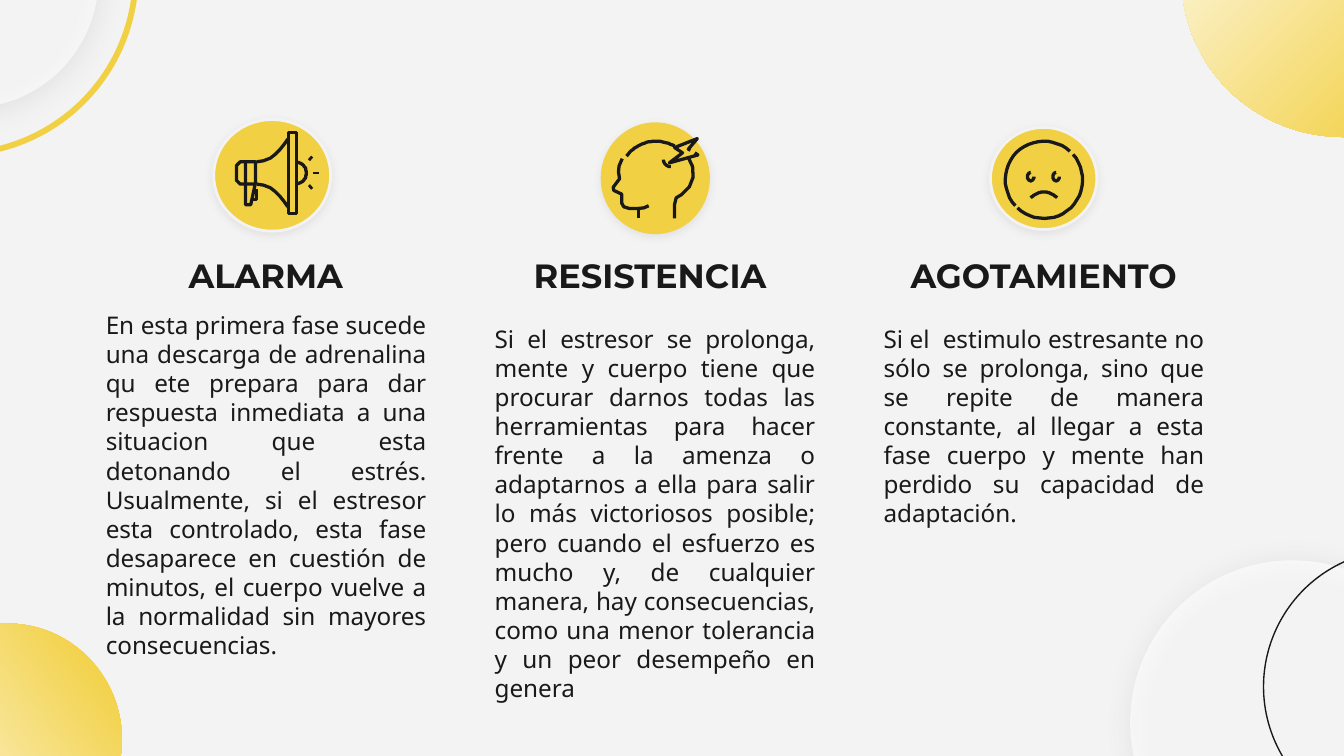
from math import cos, radians, sin

from lxml import etree
from pptx import Presentation
from pptx.dml.color import RGBColor
from pptx.enum import shapes, text
from pptx.oxml import ns
from pptx.util import Cm, Pt

YELLOW = RGBColor(0xF2, 0xD0, 0x44)
WHITE = RGBColor(0xFF, 0xFF, 0xFF)
PAPER = RGBColor(0xF3, 0xF3, 0xF3)
INK = RGBColor(0x19, 0x19, 0x19)
SHADE = RGBColor(0x59, 0x59, 0x59)


def arc(x, y, rx, ry, start, end):
    """Points along an elliptical arc; angles in degrees, clockwise from the right."""
    angles = [radians(start + (end - start) * i / 24) for i in range(25)]
    return [(round(x + rx * cos(a)), round(y + ry * sin(a))) for a in angles]


def draw_strokes(group, width, *lines):
    """Draw open lines, given in hundredths of a centimetre, as one shape."""
    builder = group.shapes.build_freeform(*lines[0][0], scale=Cm(0.01))
    builder.add_line_segments(lines[0][1:], close=False)
    for line in lines[1:]:
        builder.move_to(*line[0])
        builder.add_line_segments(line[1:], close=False)
    shape = builder.convert_to_shape()
    shape.shadow.inherit = False
    shape.fill.background()
    shape.line.color.rgb = INK
    shape.line.width = Pt(width)


deck = Presentation()
deck.slide_width, deck.slide_height = Cm(25.4), Cm(14.29)
page = deck.slides.add_slide(deck.slide_layouts[6])
page.background.fill.solid()
page.background.fill.fore_color.rgb = PAPER

# Corner decorations and icon badges, back to front
relief = {"blur": 14.6, "dist": 2.2, "dir": 74, "alpha": 19}
soft = {"blur": 4.5, "dist": 1.5, "dir": 90, "alpha": 11}
badge = {"fill": YELLOW, "width": 1.5, "shadow": soft}
glass = {"fill": WHITE, "alpha": 62, "rotation": 213.6, "shadow": relief}
rounds = [
    ((22.33, -3.43, 6.1, 6.02), {"gradient": True}),
    ((-3.02, -2.84, 4.88, 4.88), glass),
    ((-4.29, -3.94, 6.91, 6.91), {"fill": YELLOW, "hole": 0.016}),
    ((-2.06, 11.81, 4.39, 4.34), {"gradient": True, "rotation": 278.6}),
    ((21.36, 10.59, 6.12, 6.12), glass),
    ((4.04, 2.26, 2.21, 2.11), {**badge, "line": PAPER}),
    ((11.38, 2.34, 2.01, 2.06), {**badge, "line": YELLOW}),
    ((18.72, 2.41, 2.01, 1.93), {**badge, "line": PAPER}),
    ((23.88, 10.39, 5.18, 5.18), {"line": INK, "width": 0.75}),
]
for place, look in rounds:
    kind = shapes.MSO_SHAPE.DONUT if "hole" in look else shapes.MSO_SHAPE.OVAL
    shape = page.shapes.add_shape(kind, *map(Cm, place))
    shape.rotation = look.get("rotation", 0)
    shape.shadow.inherit = False
    if "hole" in look:
        shape.adjustments[0] = look["hole"]
    if "gradient" in look:
        shape.fill.gradient()
        shape.fill.gradient_angle = 135
        for stop, position, color in zip(shape.fill.gradient_stops, (0.15, 1), (YELLOW, WHITE)):
            stop.position = position
            stop.color.rgb = color
    elif "fill" in look:
        shape.fill.solid()
        shape.fill.fore_color.rgb = look["fill"]
    else:
        shape.fill.background()
    if "alpha" in look:
        color = shape.fill._xPr.find(".//" + ns.qn("a:srgbClr"))
        etree.SubElement(color, ns.qn("a:alpha"), val=str(look["alpha"] * 1000))
    if "line" in look:
        shape.line.color.rgb = look["line"]
        shape.line.width = Pt(look["width"])
    else:
        shape.line.fill.background()
    if "shadow" in look:
        shadow = look["shadow"]
        effects = shape._element.spPr.find(ns.qn("a:effectLst"))
        outer = etree.SubElement(
            effects, ns.qn("a:outerShdw"), blurRad=str(Pt(shadow["blur"])),
            dist=str(Pt(shadow["dist"])), dir=str(shadow["dir"] * 60000), rotWithShape="0")
        color = etree.SubElement(outer, ns.qn("a:srgbClr"), val=str(SHADE))
        etree.SubElement(color, ns.qn("a:alpha"), val=str(shadow["alpha"] * 1000))

# Megaphone
horn = [(485, 306), (498, 304), (511, 299), (520, 292), (529, 283), (537, 273), (544, 263)]
megaphone = page.shapes.add_group_shape()
draw_strokes(
    megaphone, 1.75,
    [(483, 306), (454, 306), (447, 313), (447, 341), (454, 348), (483, 348), (483, 306)],
    horn, [(x, 654 - y) for x, y in horn],
    [(546, 251), (561, 251), (561, 403), (546, 403), (546, 251)],
    arc(562, 327, 17, 20, -90, 90),
    [(464, 306), (464, 387), (474, 387), (482, 350)],
    [(479, 377), (485, 377), (485, 357)])
for ray in ([(592, 327), (603, 327)], [(584, 303), (590, 296)], [(584, 350), (590, 357)]):
    draw_strokes(megaphone, 1.5, ray)

# Head struck by a bolt
head = page.shapes.add_group_shape()
draw_strokes(
    head, 1.75,
    [(1176, 300), (1170, 314), (1169, 325), (1171, 338), (1159, 354), (1160, 360), (1175, 367),
     (1175, 384), (1179, 391), (1189, 394), (1207, 394), (1217, 393), (1226, 389)],
    [(1207, 394), (1207, 413)])
draw_strokes(
    head, 1.75,
    arc(1240, 337, 70, 70, 217, 300),
    [(1313, 289), (1319, 293), (1265, 308), (1290, 289), (1275, 279), (1318, 262),
     (1301, 282), (1305, 284)],
    [(1301, 298), (1309, 315), (1310, 335), (1303, 353), (1288, 368), (1278, 374),
     (1275, 386), (1275, 413)])
draw_strokes(head, 1.75, arc(1268, 302, 14, 13, 180, 90))

# Sad face
face = page.shapes.add_group_shape()
for line in (arc(1948, 334, 6, 8, 0, 270), arc(1996, 334, 6, 8, 0, 270),
             arc(1973, 396, 33, 33, 222, 318),
             arc(1973, 340, 73, 73, 138, 312), arc(1973, 340, 73, 73, -41, 133)):
    draw_strokes(face, 1.75, line)

# Three phases: heading and body per column
heading = {"name": "Montserrat", "size": Pt(18), "bold": True}
body = {"name": "Noto Sans", "size": Pt(13), "bold": False}
phases = [
    ("ALARMA", 4.27, 1.57, 5.61, 6.63,
     "En esta primera fase sucede una descarga de adrenalina qu ete prepara para dar respuesta "
     "inmediata a una situacion que esta detonando el estrés. Usualmente, si el estresor esta "
     "controlado, esta fase desaparece en cuestión de minutos, el cuerpo vuelve a la normalidad "
     "sin mayores consecuencias."),
    ("RESISTENCIA ", 4.62, 1.22, 5.87, 7.8,
     "Si el estresor se prolonga, mente y cuerpo tiene que procurar darnos todas las "
     "herramientas para hacer frente a la amenza o adaptarnos a ella para salir lo más "
     "victoriosos posible; pero cuando el esfuerzo es mucho y, de cualquier manera, hay "
     "consecuencias, como una menor tolerancia y un peor desempeño en genera"),
    ("AGOTAMIENTO", 4.62, 1.22, 5.87, 7.8,
     "Si el  estimulo estresante no sólo se prolonga, sino que se repite de manera constante, "
     "al llegar a esta fase cuerpo y mente han perdido su capacidad de adaptación."),
]
for column, (name, name_top, name_height, top, height, words) in enumerate(phases):
    for content, y, tall, style, align, anchor in (
        (name, name_top, name_height, heading, text.PP_ALIGN.CENTER, text.MSO_ANCHOR.BOTTOM),
        (words, top, height, body, text.PP_ALIGN.JUSTIFY, text.MSO_ANCHOR.TOP),
    ):
        box = page.shapes.add_textbox(Cm(1.75 + 7.35 * column), Cm(y), Cm(6.55), Cm(tall))
        frame = box.text_frame
        frame.word_wrap = True
        frame.vertical_anchor = anchor
        for side in ("left", "top", "right", "bottom"):
            setattr(frame, f"margin_{side}", Cm(0.25))
        para = frame.paragraphs[0]
        para.alignment = align
        span = para.add_run()
        span.text = content
        span.font.color.rgb = INK
        for key, value in style.items():
            setattr(span.font, key, value)

deck.save("out.pptx")
